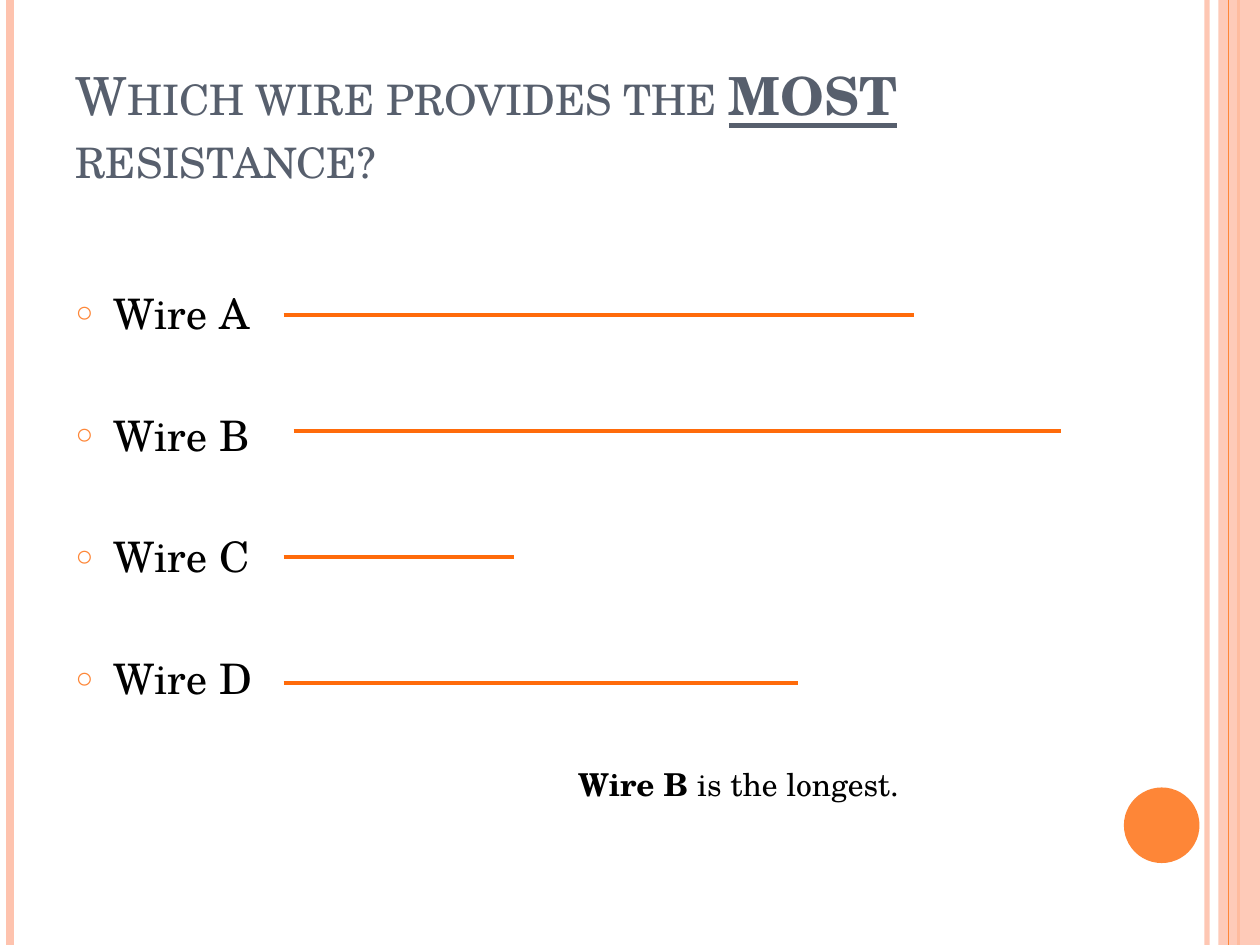
import pptx
import pptx.util
import pptx.dml.color
import pptx.enum.shapes
import pptx.enum.text
import pptx.oxml.ns
from lxml import etree

Inches, Pt = pptx.util.Inches, pptx.util.Pt
RGBColor = pptx.dml.color.RGBColor
qn = pptx.oxml.ns.qn

FONT = "TeX Gyre Schola"
PEACH = RGBColor(0xFE, 0xC3, 0xAE)
ORANGE = RGBColor(0xFE, 0x86, 0x37)
WIRE_ORANGE = RGBColor(0xFF, 0x6B, 0x0A)
SLATE = RGBColor(0x57, 0x5F, 0x6D)
BLACK = RGBColor(0, 0, 0)
WIDTH, HEIGHT = 10, 7.5


def set_alpha(fill_owner, percent):
    color = fill_owner.find(".//" + qn("a:srgbClr"))
    etree.SubElement(color, qn("a:alpha")).set("val", str(percent * 1000))


def add_line(slide, start, end, color, weight, alpha=None):
    line = slide.shapes.add_connector(
        pptx.enum.shapes.MSO_CONNECTOR.STRAIGHT,
        *(Inches(length) for length in (*start, *end)))
    line.line.color.rgb = color
    line.line.width = Pt(weight)
    properties = line._element.spPr
    if alpha:
        set_alpha(properties, alpha)
    etree.SubElement(properties, qn("a:effectLst"))


def add_solid(slide, preset, box, color, alpha=None):
    solid = slide.shapes.add_shape(preset, *(Inches(length) for length in box))
    solid.shadow.inherit = False
    solid.fill.solid()
    solid.fill.fore_color.rgb = color
    solid.line.fill.background()
    if alpha:
        set_alpha(solid._element.spPr, alpha)


def place(shape, box):
    shape.left, shape.top, shape.width, shape.height = (
        Inches(length) for length in box)
    shape.text_frame.word_wrap = True
    shape.text_frame.auto_size = pptx.enum.text.MSO_AUTO_SIZE.NONE


def style(font, size, color):
    font.name = FONT
    font.size = Pt(size)
    font.color.rgb = color


def add_run(paragraph, text, size, color, bold=False, underline=False):
    run = paragraph.add_run()
    run.text = text
    style(run.font, size, color)
    run.font.bold = bold
    run.font.underline = underline
    return run


def add_bullet(paragraph):
    properties = paragraph._p.get_or_add_pPr()
    properties.set("marL", str(Inches(0.3)))
    properties.set("indent", str(Inches(-0.3)))
    bullet_color = etree.Element(qn("a:buClr"))
    etree.SubElement(bullet_color, qn("a:srgbClr")).set("val", str(ORANGE))
    bullet_size = etree.Element(qn("a:buSzPct"))
    bullet_size.set("val", "70000")
    bullet = etree.Element(qn("a:buChar"))
    bullet.set("char", "○")
    # Bullet settings stand after the spacing and before the default font
    default_font = properties.find(qn("a:defRPr"))
    for part in (bullet_color, bullet_size, bullet):
        default_font.addprevious(part)


def add_borders(slide, box):
    left, top, width, height = box
    right, bottom = left + width, top + height

    def rule(x, color, weight, alpha=None):
        add_line(slide, (x, top), (x, bottom), color, weight, alpha)

    rule(right - 0.42, PEACH, 3, 93)
    rule(left + 0.08, PEACH, 4.5)
    rule(right - 0.17, ORANGE, 1.5)
    shapes = pptx.enum.shapes.MSO_SHAPE
    add_solid(slide, shapes.RECTANGLE, (right - 0.33, top, 0.33, height), PEACH, 87)
    rule(right - 0.25, ORANGE, 0.75)
    add_solid(slide, shapes.OVAL, (right - 1.08, bottom - 1.25, 0.6, 0.6), ORANGE)


def add_question(slide, box):
    title = slide.shapes.title
    place(title, box)
    title.text_frame.vertical_anchor = pptx.enum.text.MSO_ANCHOR.BOTTOM
    question = title.text_frame.paragraphs[0]
    question.alignment = pptx.enum.text.PP_ALIGN.LEFT
    for text, stressed in (("Which wire provides the ", False),
                           ("MOST ", True), ("resistance?", False)):
        run = add_run(question, text, 30, SLATE, stressed, stressed)
        run._r.get_or_add_rPr().set("cap", "small")


def add_wires(slide, box):
    left, top, _, _ = box
    body = slide.placeholders[1]
    place(body, box)
    frame = body.text_frame
    frame.margin_top = Inches(0.53)
    # Name, start, height and length of each wire, from the box's corner
    wires = (("Wire A", 1.75, 0.75, 5), ("Wire B", 1.83, 1.67, 6.09),
             ("Wire C", 1.75, 2.67, 1.83), ("Wire D", 1.75, 3.67, 4.08))
    for index, (name, x, y, length) in enumerate(wires):
        label = frame.add_paragraph() if index else frame.paragraphs[0]
        label.text = name
        label.space_before = Pt(40.8 if index else 0)
        style(label.font, 24, BLACK)
        add_bullet(label)
        add_line(slide, (left + x, top + y), (left + x + length, top + y),
                 WIRE_ORANGE, 2.5)


def add_answer(slide, box):
    answer = slide.shapes.add_textbox(*(Inches(length) for length in box))
    answer.text_frame.word_wrap = True
    sentence = answer.text_frame.paragraphs[0]
    add_run(sentence, "Wire B ", 18, BLACK, bold=True)
    add_run(sentence, "is the longest.", 18, BLACK)


def main():
    deck = pptx.Presentation()
    deck.slide_width, deck.slide_height = Inches(WIDTH), Inches(HEIGHT)
    slide = deck.slides.add_slide(deck.slide_layouts[1])
    add_borders(slide, (0, 0, WIDTH, HEIGHT))
    add_question(slide, (0.5, 0.3, 8.17, 1.25))
    add_wires(slide, (0.5, 1.75, 8.17, 5.33))
    add_answer(slide, (4.49, 6.02, 3.33, 0.4))
    deck.save("out.pptx")


if __name__ == "__main__":
    main()
